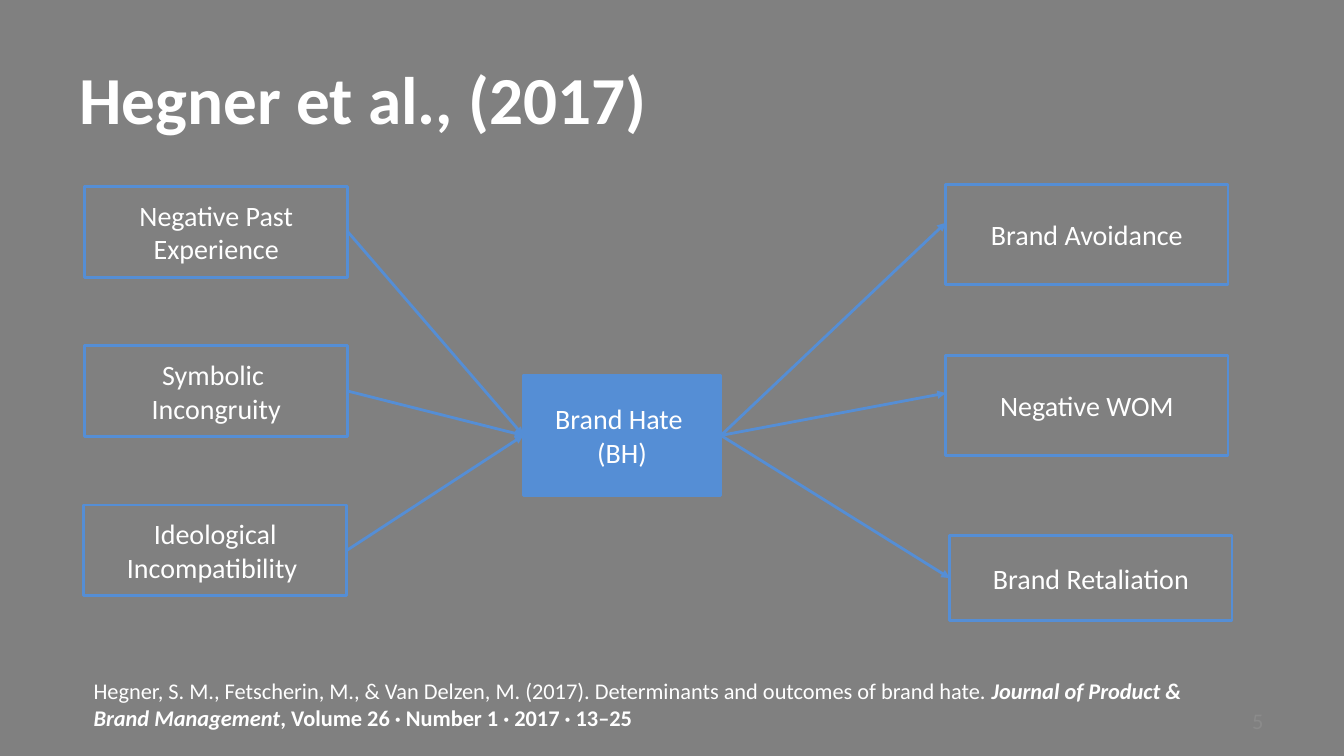
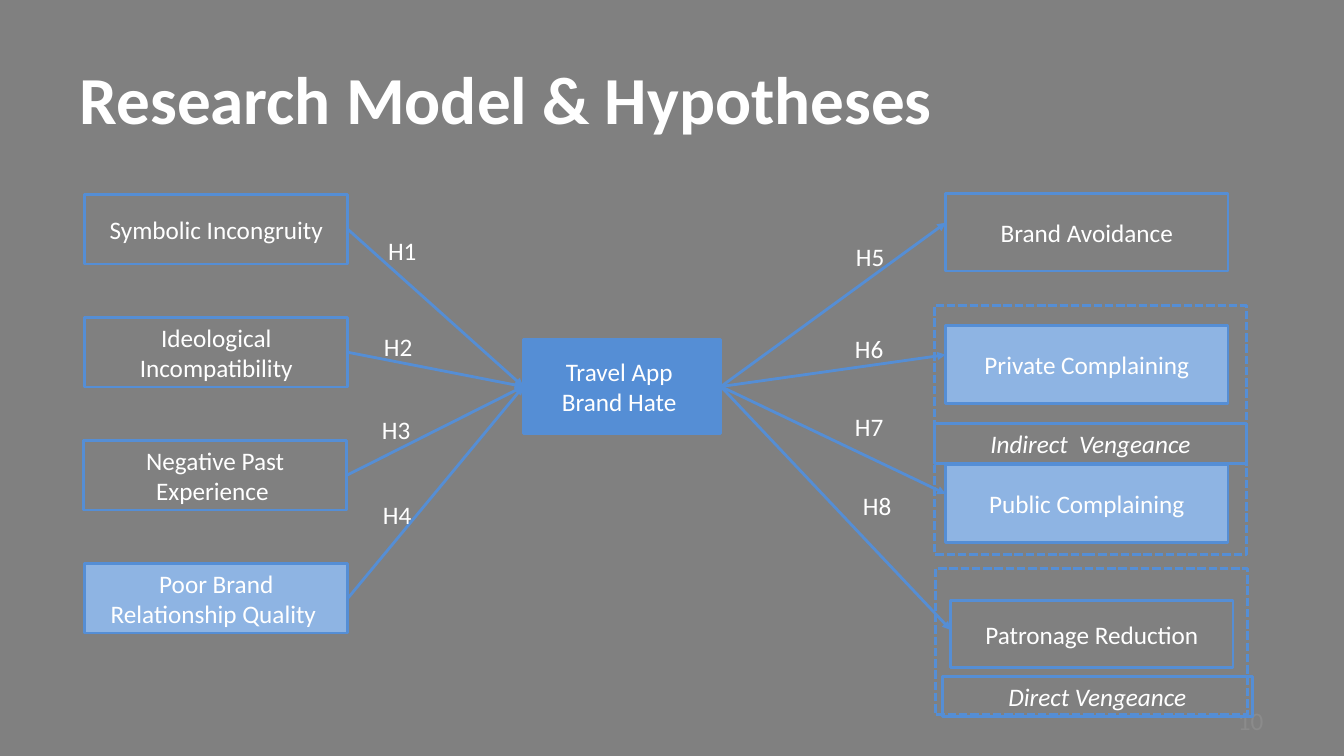
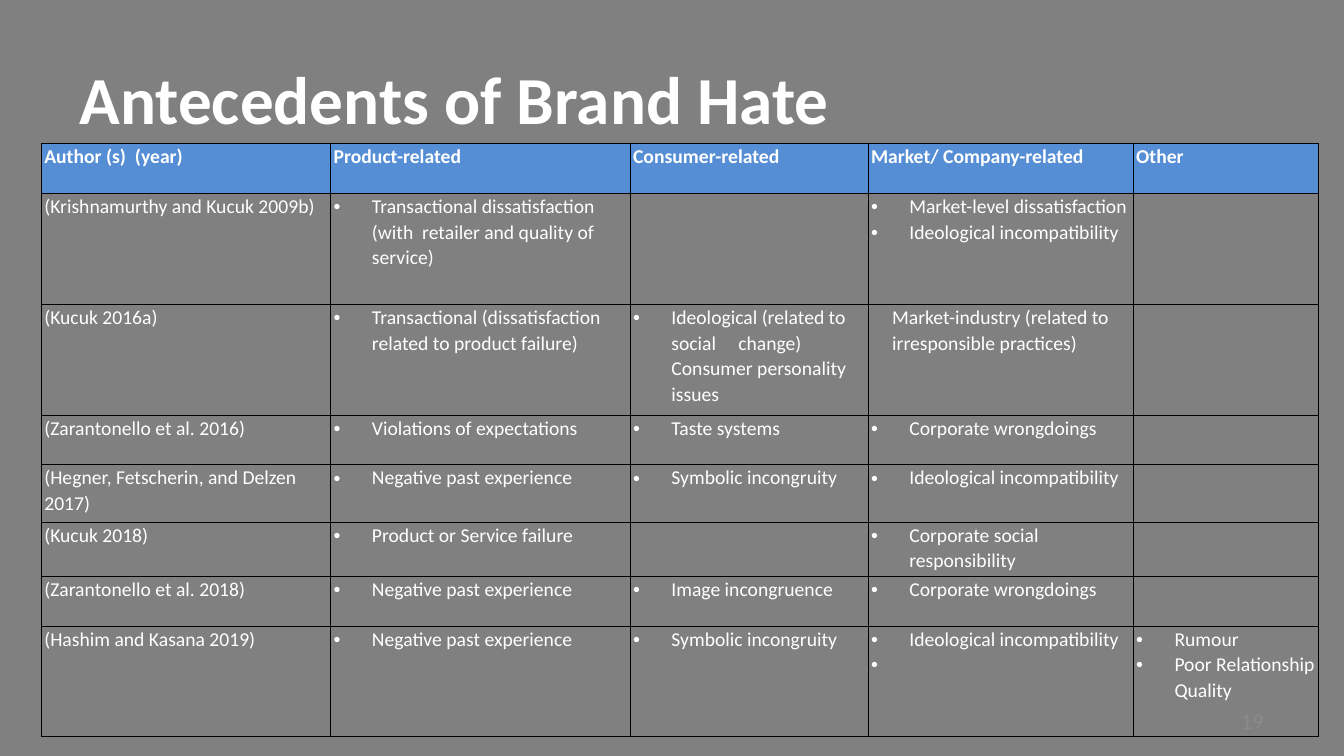
import lxml.etree
import pptx
import pptx.dml.color
import pptx.enum.dml
import pptx.enum.shapes
import pptx.enum.text
import pptx.oxml.ns
import pptx.util

Inches = pptx.util.Inches
Pt = pptx.util.Pt
RGB = pptx.dml.color.RGBColor.from_string
qn = pptx.oxml.ns.qn
Align = pptx.enum.text.PP_ALIGN
RECTANGLE = pptx.enum.shapes.MSO_SHAPE.RECTANGLE
STRAIGHT = pptx.enum.shapes.MSO_CONNECTOR.STRAIGHT

COLORS = {
    "background": "808080",
    "text": "FFFFFF",
    "accent": "558ED5",
    "light": "8EB4E3",
    "number": "8B8B8B",
    "border": "000000",
}
FONT = "Calibri"
LINE_WIDTH = Pt(2)

deck = pptx.Presentation()
deck.slide_width, deck.slide_height = Inches(13.33), Inches(7.5)
master_fill = deck.slide_master.background.fill
master_fill.solid()
master_fill.fore_color.rgb = RGB(COLORS["background"])


def style_text(frame, size, align=Align.LEFT, color="text", **emphasis):
    """Format every run; emphasis may hold bold and italic."""
    for para in frame.paragraphs:
        para.alignment = align
        for span in para.runs:
            span.font.name = FONT
            span.font.size = Pt(size)
            span.font.color.rgb = RGB(COLORS[color])
            for name, value in emphasis.items():
                setattr(span.font, name, value)


def add_page(title, number, number_size):
    page = deck.slides.add_slide(deck.slide_layouts[5])
    heading = page.shapes.title
    heading.left, heading.top = Inches(0.66), Inches(0.58)
    heading.width, heading.height = Inches(12), Inches(0.78)
    frame = heading.text_frame
    frame.text = title
    frame.margin_left = frame.margin_right = Inches(0.13)
    frame.margin_top = frame.margin_bottom = Inches(0.07)
    frame.vertical_anchor = pptx.enum.text.MSO_ANCHOR.MIDDLE
    frame.auto_size = pptx.enum.text.MSO_AUTO_SIZE.NONE
    style_text(frame, 48, bold=True)

    box = page.shapes.add_textbox(Inches(11.63), Inches(6.95), Inches(1), Inches(0.4))
    box.text_frame.word_wrap = True
    box.text_frame.vertical_anchor = pptx.enum.text.MSO_ANCHOR.MIDDLE
    box.text_frame.text = str(number)
    style_text(box.text_frame, number_size, Align.RIGHT, "number")
    return page


# Boxes are (text, left, top, width, height, fill).
# Effects add the height at which their arrow arrives, None for the middle.
models = [
    {
        "title": "Hegner et al., (2017)",
        "number": (5, 16),
        "size": 20,
        "hub": ("Brand Hate \n(BH)", 5.19, 3.72, 1.96, 1.2, "accent"),
        "causes": [
            ("Negative Past Experience", 0.84, 1.85, 2.61, 0.9, None),
            ("Symbolic \vIncongruity", 0.84, 3.43, 2.61, 0.9, None),
            ("Ideological Incompatibility ", 0.83, 5.01, 2.61, 0.9, None),
        ],
        "effects": [
            (("Brand Avoidance", 9.38, 1.83, 2.8, 0.99, None), 2.21),
            (("Negative WOM", 9.38, 3.53, 2.8, 0.99, None), 3.9),
            (("Brand Retaliation", 9.42, 5.31, 2.8, 0.85, None), None),
        ],
        "labels": [],
        "groups": [],
    },
    {
        "title": "Research Model & Hypotheses",
        "number": (10, 18),
        "size": 18,
        "hub": ("Travel App \vBrand Hate ", 5.19, 3.37, 1.96, 0.93, "accent"),
        "causes": [
            ("Symbolic Incongruity", 0.84, 1.93, 2.61, 0.69, None),
            ("Ideological Incompatibility", 0.84, 3.15, 2.61, 0.69, None),
            ("Negative Past Experience ", 0.83, 4.37, 2.61, 0.69, None),
            ("Poor Brand Relationship Quality ", 0.84, 5.59, 2.61, 0.69, "light"),
        ],
        "effects": [
            (("Brand Avoidance", 9.38, 1.92, 2.8, 0.77, None), 2.21),
            (("Private Complaining", 9.38, 3.23, 2.8, 0.77, "light"), 3.52),
            (("Public Complaining", 9.38, 4.61, 2.8, 0.77, "light"), 4.9),
            (("Patronage Reduction", 9.43, 5.96, 2.8, 0.66, None), 6.25),
        ],
        "labels": [
            (3.75, 2.29), (3.71, 3.24), (3.69, 4.06), (3.7, 4.9),
            (8.39, 2.34), (8.38, 3.26), (8.38, 4.03), (8.46, 4.82),
        ],
        "groups": [
            ("", 9.27, 3.03, 3.09, 2.47, None),
            ("Indirect  Vengeance", 9.27, 4.2, 3.09, 0.4, None),
            ("", 9.28, 5.64, 3.09, 1.45, None),
            ("Direct Vengeance", 9.35, 6.71, 3.07, 0.4, None),
        ],
    },
]

pages = []
for model in models:
    page = add_page(model["title"], *model["number"])
    pages.append(page)

    effects = [effect for effect, arrival in model["effects"]]
    boxes = []
    for entry in [model["hub"], *model["causes"], *effects, *model["groups"]]:
        text, *place, fill = entry
        box = page.shapes.add_shape(RECTANGLE, *map(Inches, place))
        box.shadow.inherit = False
        box.line.color.rgb = RGB(COLORS["accent"])
        box.line.width = LINE_WIDTH
        if fill:
            box.fill.solid()
            box.fill.fore_color.rgb = RGB(COLORS[fill])
        else:
            box.fill.background()
        if text:
            box.text_frame.text = text
            style_text(box.text_frame, model["size"], Align.CENTER,
                       italic=entry in model["groups"])
        else:
            box.line.dash_style = pptx.enum.dml.MSO_LINE.SQUARE_DOT
        boxes.append(box)

    hub = boxes[0]
    arrivals = [None] * len(model["causes"]) + [y for effect, y in model["effects"]]
    for index, (box, arrival) in enumerate(zip(boxes[1:], arrivals)):
        source, target = (box, hub) if index < len(model["causes"]) else (hub, box)
        end_y = target.top + target.height // 2 if arrival is None else Inches(arrival)
        arrow = page.shapes.add_connector(
            STRAIGHT, source.left + source.width, source.top, target.left, end_y)
        arrow.begin_connect(source, 3)
        if arrival is None:
            arrow.end_connect(target, 1)
        arrow.line.color.rgb = RGB(COLORS["accent"])
        arrow.line.width = LINE_WIDTH
        lxml.etree.SubElement(arrow.line._get_or_add_ln(), qn("a:tailEnd"), type="triangle")
        lxml.etree.SubElement(arrow._element.spPr, qn("a:effectLst"))

    for number, (left, top) in enumerate(model["labels"], 1):
        label = page.shapes.add_textbox(Inches(left), Inches(top), Inches(0.49), Inches(0.43))
        label.text_frame.word_wrap = False
        label.text_frame.text = f"H{number}"
        style_text(label.text_frame, 18)

reference = pages[0].shapes.add_textbox(
    Inches(0.83), Inches(6.67), Inches(11.35), Inches(0.64))
reference.text_frame.word_wrap = True
for text, bold, italic in [
    ("Hegner, S. M., Fetscherin, M., & Van Delzen, M. (2017). "
     "Determinants and outcomes of brand hate. ", False, False),
    ("Journal of Product & Brand Management", True, True),
    (", Volume 26 · Number 1 · 2017 · 13–25", True, False),
]:
    span = reference.text_frame.paragraphs[0].add_run()
    span.text = text
    span.font.bold, span.font.italic = bold, italic
style_text(reference.text_frame, 16)

# Antecedents table
page = add_page("Antecedents of Brand Hate", 19, 16)
column_widths = [2.87, 2.97, 2.36, 2.63, 1.84]
row_heights = [0.5, 1.1, 1.1, 0.49, 0.57, 0.54, 0.49, 1.1]
rows = [
    ["Author (s)  (year)", "Product-related", "Consumer-related",
     "Market/ Company-related", "Other"],
    ["(Krishnamurthy and Kucuk 2009b)",
     "Transactional dissatisfaction (with  retailer and quality of service)", "",
     "Market-level dissatisfaction\nIdeological incompatibility", ""],
    ["(Kucuk 2016a)", "Transactional (dissatisfaction related to product failure)",
     "Ideological (related to social     change) Consumer personality issues",
     "Market-industry (related to irresponsible practices)", ""],
    ["(Zarantonello et al. 2016)", "Violations of expectations", "Taste systems",
     "Corporate wrongdoings", ""],
    ["(Hegner, Fetscherin, and Delzen 2017)", "Negative past experience",
     "Symbolic incongruity", "Ideological incompatibility", ""],
    ["(Kucuk 2018)", "Product or Service failure", "",
     "Corporate social responsibility", ""],
    ["(Zarantonello et al. 2018)", "Negative past experience", "Image incongruence",
     "Corporate wrongdoings", ""],
    ["(Hashim and Kasana 2019)", "Negative past experience", "Symbolic incongruity",
     "Ideological incompatibility\n ", "Rumour\nPoor Relationship Quality"],
]
unbulleted = (2, 3)

table = page.shapes.add_table(
    len(rows), len(column_widths), Inches(0.41), Inches(1.42),
    Inches(sum(column_widths)), Inches(sum(row_heights))).table
table.horz_banding = False
for column, width in zip(table.columns, column_widths):
    column.width = Inches(width)
for row, height in zip(table.rows, row_heights):
    row.height = Inches(height)

for r, texts in enumerate(rows):
    for c, text in enumerate(texts):
        cell = table.cell(r, c)
        cell.margin_left = cell.margin_right = Inches(0.03)
        cell.margin_top = cell.margin_bottom = 0
        cell_format = cell._tc.get_or_add_tcPr()
        for side in ("lnL", "lnR", "lnT", "lnB"):
            edge = lxml.etree.SubElement(cell_format, qn(f"a:{side}"), w=str(Pt(0.5)))
            edge_fill = lxml.etree.SubElement(edge, qn("a:solidFill"))
            lxml.etree.SubElement(edge_fill, qn("a:srgbClr"), val=COLORS["border"])
        if r == 0:
            cell.fill.solid()
            cell.fill.fore_color.rgb = RGB(COLORS["accent"])
        else:
            cell.fill.background()

        if not text:
            continue
        cell.text_frame.text = text
        style_text(cell.text_frame, 14, bold=r == 0)
        for para in cell.text_frame.paragraphs:
            para.line_spacing = 1.07
            para_format = para._p.get_or_add_pPr()
            if (r, c) == unbulleted:
                para_format.set("marL", str(Inches(0.21)))
            elif r > 0 and c > 0:
                para_format.set("marL", str(Inches(0.38)))
                para_format.set("indent", str(Inches(-0.38)))
                lxml.etree.SubElement(para_format, qn("a:buFont"), typeface="Arial")
                lxml.etree.SubElement(para_format, qn("a:buChar"), char="•")

deck.save("out.pptx")
